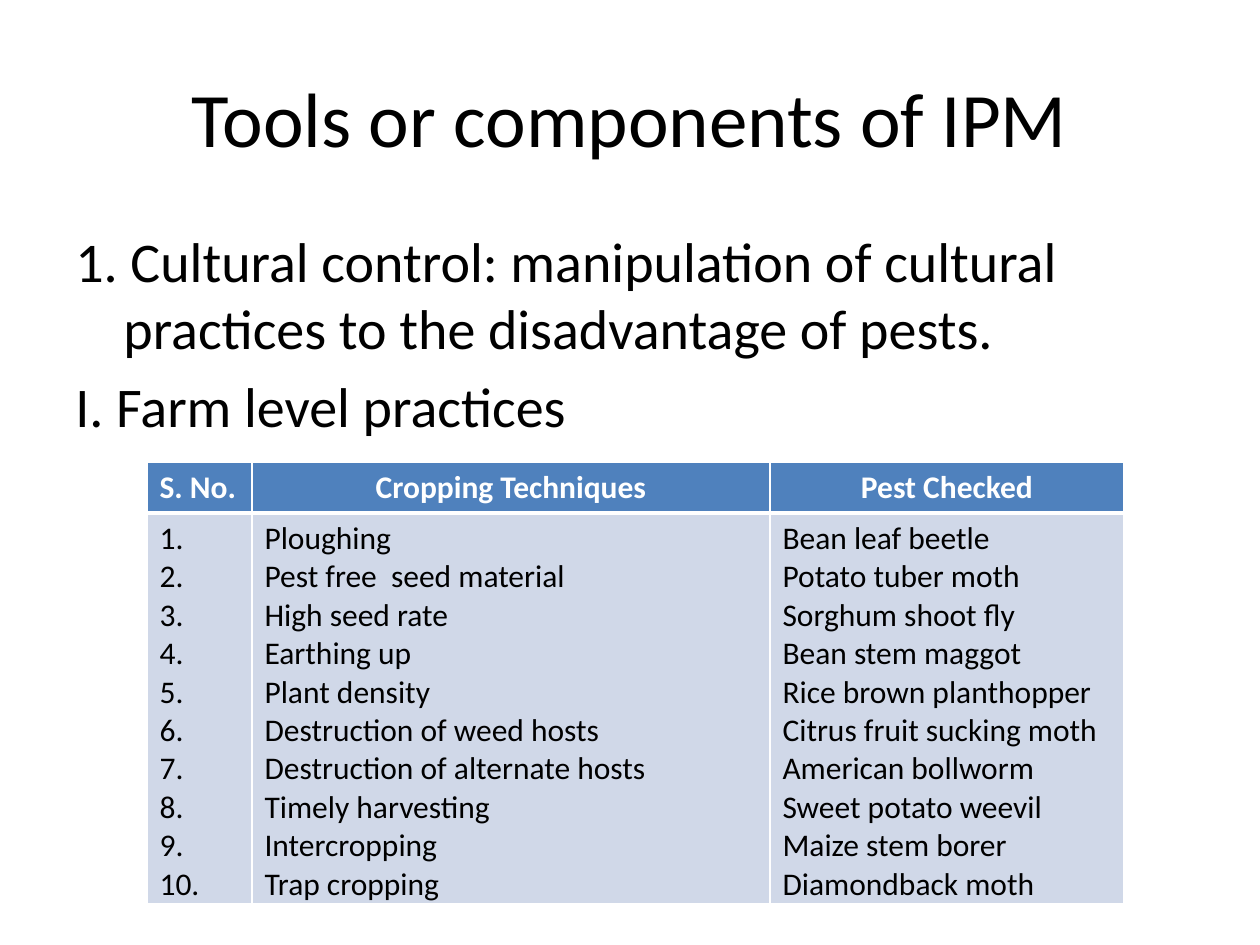
"""Build the slide on the tools of integrated pest management."""
import dataclasses

import lxml.etree
import pptx
import pptx.dml.color
import pptx.enum.text
import pptx.oxml.ns
import pptx.util

ALIGN = pptx.enum.text.PP_ALIGN
ANCHOR = pptx.enum.text.MSO_ANCHOR


@dataclasses.dataclass(frozen=True)
class Theme:
    """Hold the colours, font and type sizes."""
    font: str = "Calibri"
    ink: str = "000000"
    white: str = "FFFFFF"
    head: str = "4F81BD"
    band: str = "D0D8E8"
    title: int = 44
    body: int = 32
    cell: int = 18
    thin: int = 1
    thick: int = 3


THEME = Theme()
HEADS = ("S. No.", "Cropping Techniques", "Pest Checked")
PAIRS = (
    ("Ploughing", "Bean leaf beetle"),
    ("Pest free  seed material", "Potato tuber moth"),
    ("High seed rate", "Sorghum shoot fly"),
    ("Earthing up", "Bean stem maggot"),
    ("Plant density", "Rice brown planthopper"),
    ("Destruction of weed hosts", "Citrus fruit sucking moth"),
    ("Destruction of alternate hosts", "American bollworm"),
    ("Timely harvesting", "Sweet potato weevil"),
    ("Intercropping", "Maize stem borer"),
    ("Trap cropping", "Diamondback moth"),
)
POINTS = (
    ("1. Cultural control: manipulation of cultural practices "
     "to the disadvantage of pests.", 48),
    ("I. Farm level practices", 71),
)


def px(count):
    """Turn pixels into EMU."""
    return pptx.util.Emu(round(count * 914400 / 126))


def rgb(code):
    """Turn a hex code into a colour."""
    return pptx.dml.color.RGBColor.from_string(code)


def add_run(para, text, size, color=THEME.ink, bold=False):
    """Add one styled run to a paragraph."""
    run = para.add_run()
    run.text = text
    run.font.name = THEME.font
    run.font.size = pptx.util.Pt(size)
    run.font.bold = bold
    run.font.color.rgb = rgb(color)


def add_lines(frame, lines, size, align=ALIGN.LEFT, **style):
    """Write one paragraph per line and return the paragraphs."""
    for index, line in enumerate(lines):
        para = frame.add_paragraph() if index else frame.paragraphs[0]
        para.alignment = align
        add_run(para, line, size, **style)
    return frame.paragraphs


def add_box(slide, *area):
    """Add a wrapping text box and return its frame."""
    frame = slide.shapes.add_textbox(*map(px, area)).text_frame
    frame.word_wrap = True
    return frame


def add_title(slide, text):
    """Add the centred title."""
    frame = add_box(slide, 63, 38, 1134, 158)
    frame.vertical_anchor = ANCHOR.MIDDLE
    add_lines(frame, [text], THEME.title, ALIGN.CENTER)


def add_body(slide, points):
    """Add the body text with hanging indents."""
    frame = add_box(slide, 63, 220, 1134, 624)
    paras = add_lines(frame, [text for text, _ in points], THEME.body)
    for para, (_, hang) in zip(paras, points):
        para.space_before = pptx.util.Pt(THEME.body * 0.2)
        props = para._p.get_or_add_pPr()
        props.set("marL", str(px(hang)))
        props.set("indent", str(-px(hang)))


def add_edges(cell, **widths):
    """Draw the four white borders of a cell."""
    name = pptx.oxml.ns.qn
    props = cell._tc.get_or_add_tcPr()
    for side in "LRTB":
        width = pptx.util.Pt(widths.get(side, THEME.thin))
        line = lxml.etree.SubElement(props, name(f"a:ln{side}"), w=str(width))
        fill = lxml.etree.SubElement(line, name("a:solidFill"))
        lxml.etree.SubElement(fill, name("a:srgbClr"), val=THEME.white)


def fill_cell(cell, lines, back, edges, **style):
    """Give a cell its borders, fill and text."""
    add_edges(cell, **edges)
    cell.fill.solid()
    cell.fill.fore_color.rgb = rgb(back)
    add_lines(cell.text_frame, lines, THEME.cell, **style)


def add_grid(slide, heads, pairs):
    """Add the table of techniques and pests."""
    widths, heights = (105, 518, 354), (51, 391)
    area = (147, 462, sum(widths), sum(heights))
    table = slide.shapes.add_table(2, len(heads), *map(px, area)).table
    table.horz_banding = False
    for row, height in zip(table.rows, heights):
        row.height = px(height)
    marks = [f"{number}." for number in range(1, len(pairs) + 1)]
    lists = (marks, *zip(*pairs))
    for col, (width, head, lines) in enumerate(zip(widths, heads, lists)):
        table.columns[col].width = px(width)
        fill_cell(table.cell(0, col), [head], THEME.head, {"B": THEME.thick},
                  align=ALIGN.CENTER if col else ALIGN.LEFT,
                  color=THEME.white, bold=True)
        fill_cell(table.cell(1, col), lines, THEME.band, {"T": THEME.thick})


def main():
    """Build and save the slide."""
    deck = pptx.Presentation()
    deck.slide_width, deck.slide_height = px(1260), px(945)
    slide = deck.slides.add_slide(deck.slide_layouts[6])
    add_title(slide, "Tools or components of IPM")
    add_body(slide, POINTS)
    add_grid(slide, HEADS, PAIRS)
    deck.save("out.pptx")


if __name__ == "__main__":
    main()
